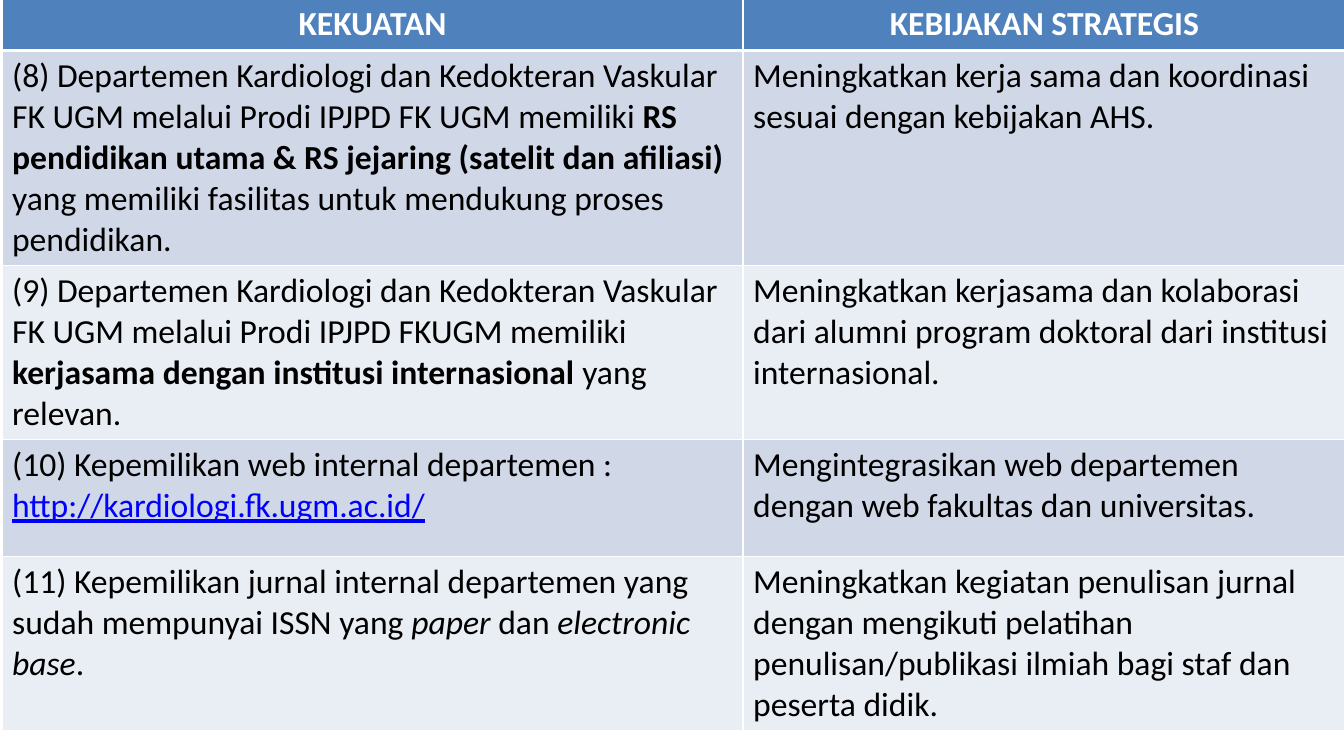
from dataclasses import dataclass

from lxml.etree import SubElement
from pptx import Presentation
from pptx.dml.color import RGBColor
from pptx.enum.text import PP_ALIGN as Align
from pptx.oxml.ns import qn
from pptx.table import _Cell as Cell
from pptx.util import Inches, Length, Pt

WHITE = RGBColor(0xFF, 0xFF, 0xFF)
BLACK = RGBColor(0x00, 0x00, 0x00)
LINK = RGBColor(0x00, 0x00, 0xFF)
HEAD = RGBColor(0x4F, 0x81, 0xBD)
BANDS = (RGBColor(0xD0, 0xD8, 0xE8), RGBColor(0xE9, 0xED, 0xF4))
FONT = "Calibri"
SIZE = Pt(24)
STEP = Inches(0.01)
COLS = (735, 598)
ROWS = (51, 108, 132, 116, 112)


@dataclass(frozen=True)
class Part:
    text: str
    bold: bool = False
    slant: bool = False
    link: bool = False


@dataclass(frozen=True)
class Entry:
    power: tuple[Part, ...]
    policy: tuple[Part, ...]


HEADER = Entry((Part("KEKUATAN"),), (Part("KEBIJAKAN STRATEGIS"),))
ENTRIES = (
    Entry(
        (
            Part("(8) Departemen Kardiologi dan Kedokteran Vaskular FK UGM "
                 "melalui Prodi IPJPD FK UGM memiliki "),
            Part("RS pendidikan utama & RS jejaring (satelit dan afiliasi)", bold=True),
            Part(" yang memiliki fasilitas untuk mendukung proses pendidikan."),
        ),
        (Part("Meningkatkan kerja sama dan koordinasi sesuai dengan kebijakan AHS."),),
    ),
    Entry(
        (
            Part("(9) Departemen Kardiologi dan Kedokteran Vaskular FK UGM "
                 "melalui Prodi IPJPD FKUGM memiliki "),
            Part("kerjasama dengan institusi internasional", bold=True),
            Part(" yang relevan."),
        ),
        (Part("Meningkatkan kerjasama dan kolaborasi dari alumni program doktoral "
              "dari institusi internasional."),),
    ),
    Entry(
        (
            Part("(10) Kepemilikan web internal departemen : "),
            Part("http://kardiologi.fk.ugm.ac.id/", link=True),
        ),
        (Part("Mengintegrasikan web departemen dengan web fakultas dan universitas."),),
    ),
    Entry(
        (
            Part("(11) Kepemilikan jurnal internal departemen yang sudah mempunyai "
                 "ISSN yang "),
            Part("paper", slant=True),
            Part(" dan "),
            Part("electronic base", slant=True),
            Part("."),
        ),
        (Part("Meningkatkan kegiatan penulisan jurnal dengan mengikuti pelatihan "
              "penulisan/publikasi ilmiah bagi staf dan peserta didik."),),
    ),
)


def grid(count: int) -> Length:
    return Length(count * STEP)


def edge(cell: Cell, top: int, base: int) -> None:
    props = cell._tc.get_or_add_tcPr()
    for side, width in (("L", 1), ("R", 1), ("T", top), ("B", base)):
        line = SubElement(props, qn(f"a:ln{side}"), w=str(Pt(width)))
        fill = SubElement(line, qn("a:solidFill"))
        SubElement(fill, qn("a:srgbClr"), val=str(WHITE))


def write(cell: Cell, parts: tuple[Part, ...], row: int) -> None:
    head = row == 0
    edge(cell, 3 if row == 1 else 1, 3 if head else 1)
    cell.fill.solid()
    cell.fill.fore_color.rgb = HEAD if head else BANDS[(row - 1) % len(BANDS)]
    para = cell.text_frame.paragraphs[0]
    para.alignment = Align.CENTER if head else Align.LEFT
    para.font.name = FONT
    para.font.size = SIZE
    para.font.bold = head
    para.font.color.rgb = WHITE if head else BLACK
    for part in parts:
        run = para.add_run()
        run.text = part.text
        if part.bold:
            run.font.bold = True
        if part.slant:
            run.font.italic = True
        if part.link:
            run.font.underline = True
            run.font.color.rgb = LINK


def main() -> None:
    deck = Presentation()
    deck.slide_width, deck.slide_height = grid(1333), grid(750)
    slide = deck.slides.add_slide(deck.slide_layouts[6])
    frame = slide.shapes.add_table(
        len(ROWS), len(COLS), grid(2), grid(-1), grid(sum(COLS)), grid(717))
    table = frame.table
    table.horz_banding = False
    for col, width in zip(table.columns, COLS):
        col.width = grid(width)
    for row, height in zip(table.rows, ROWS):
        row.height = grid(height)
    frame.height = grid(717)
    for row, entry in enumerate((HEADER, *ENTRIES)):
        for col, parts in enumerate((entry.power, entry.policy)):
            write(table.cell(row, col), parts, row)
    deck.save("out.pptx")


if __name__ == "__main__":
    main()
